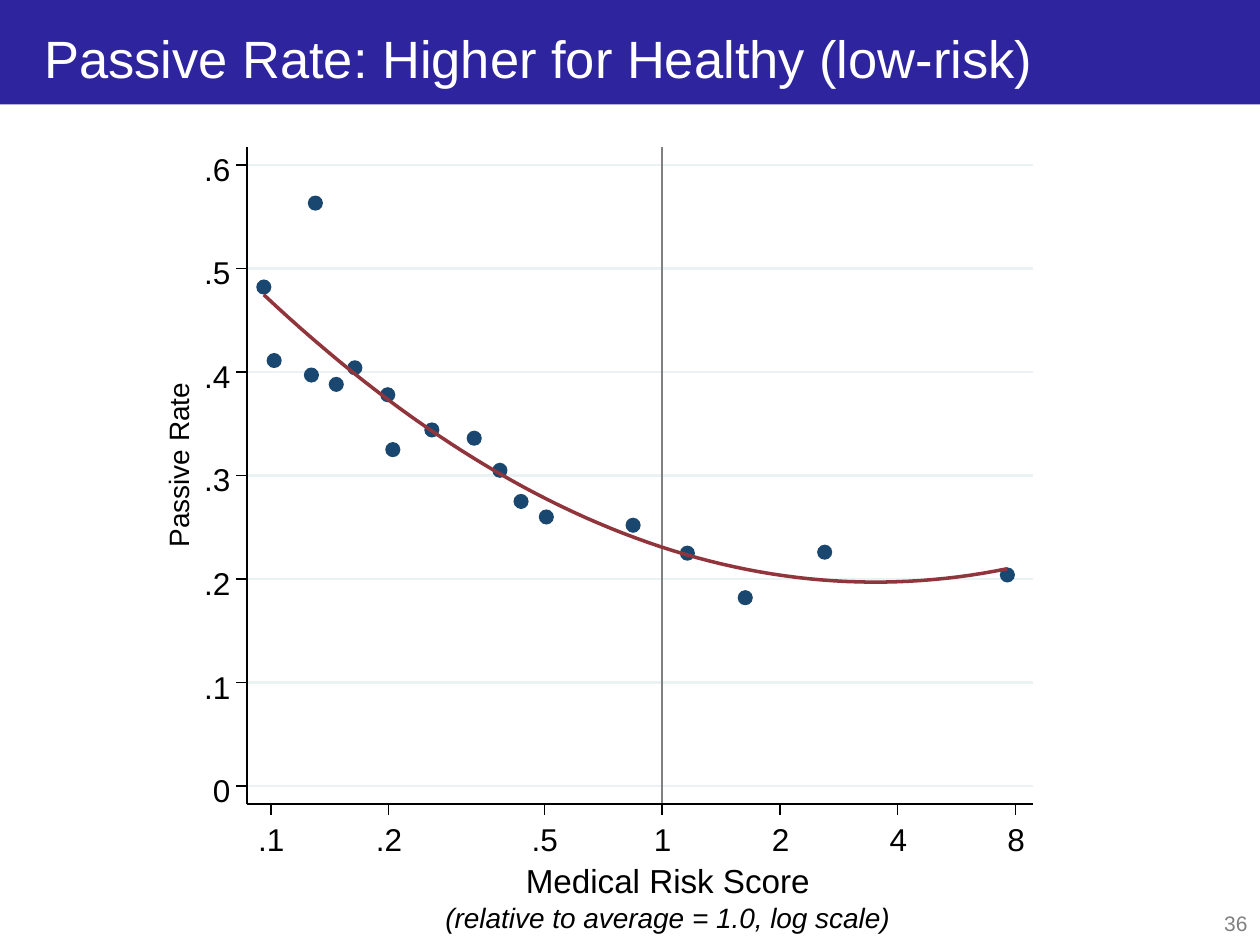
"""Build the passive rate slide: a log-scale scatter with a quadratic fit."""
from dataclasses import dataclass
from math import log2

from lxml import etree
from pptx import Presentation
from pptx.dml.color import RGBColor
from pptx.enum.shapes import MSO_CONNECTOR, MSO_SHAPE
from pptx.enum.text import MSO_ANCHOR, MSO_AUTO_SIZE, PP_ALIGN
from pptx.oxml.ns import qn
from pptx.util import Inches, Pt

LEFT, CENTER, RIGHT = PP_ALIGN.LEFT, PP_ALIGN.CENTER, PP_ALIGN.RIGHT
TOP, MIDDLE = MSO_ANCHOR.TOP, MSO_ANCHOR.MIDDLE
FIXED_SIZE = MSO_AUTO_SIZE.NONE
STRAIGHT = MSO_CONNECTOR.STRAIGHT
RECTANGLE, OVAL = MSO_SHAPE.RECTANGLE, MSO_SHAPE.OVAL

COLUMNS, ROWS = 100, 75
PLOT_LEFT, PLOT_RIGHT, PLOT_TOP, PLOT_BOTTOM = 19.6, 82, 11.7, 63.8
AVERAGE_COLUMN, DOUBLING_COLUMNS = 52.55, 9.35
ZERO_ROW, RATE_STEP_ROWS = 62.4, 8.22
TICK, DOT = 0.9, 1.2

RATE_LABELS = ["0", ".1", ".2", ".3", ".4", ".5", ".6"]
SCORE_LABELS = [".1", ".2", ".5", "1", "2", "4", "8"]
RISK_AND_RATE_PERCENT = [
    (9.6, 48.2), (10.2, 41.1), (12.7, 39.7), (13, 56.3), (14.7, 38.8),
    (16.4, 40.4), (19.9, 37.8), (20.5, 32.5), (25.8, 34.4), (33.1, 33.6),
    (38.5, 30.5), (43.6, 27.5), (50.6, 26), (84.3, 25.2), (116, 22.5),
    (163.1, 18.2), (260.2, 22.6), (762.3, 20.4),
]
FIT_LOWEST_RATE, FIT_LOWEST_DOUBLING, FIT_CURVATURE = 19.7, 1.81, 1.03
FIT_STEPS = 60


@dataclass(frozen=True)
class Theme:
    font: str = "Arial"
    banner: RGBColor = RGBColor(0x2E, 0x24, 0x9E)
    paper: RGBColor = RGBColor(0xFF, 0xFF, 0xFF)
    ink: RGBColor = RGBColor(0, 0, 0)
    muted: RGBColor = RGBColor(0x80, 0x80, 0x80)
    grid: RGBColor = RGBColor(0xEA, 0xF2, 0xF3)
    dot: RGBColor = RGBColor(0x1A, 0x47, 0x6F)
    fit: RGBColor = RGBColor(0x90, 0x35, 0x3B)
    title_size: int = 30
    axis_size: int = 19
    tick_size: int = 18
    note_size: int = 16
    page_size: int = 12
    axis_width: float = 0.88
    grid_width: float = 1.38
    fit_width: float = 2


def set_values(target, values):
    for name, value in values.items():
        setattr(target, name, value)


class SlideBuilder:
    def __init__(self, deck, theme):
        self.theme = theme
        self.slide = deck.slides.add_slide(deck.slide_layouts[5])
        self.column = deck.slide_width / COLUMNS
        self.row = deck.slide_height / ROWS

    def point(self, column, row):
        return round(column * self.column), round(row * self.row)

    def frame(self, left, top, width, height):
        return *self.point(left, top), *self.point(width, height)

    def fill_text(self, frame, lines, align=LEFT, anchor=TOP, inset=(0, 0)):
        side, edge = (Inches(gap) for gap in inset)
        set_values(frame, {
            "word_wrap": True, "auto_size": FIXED_SIZE, "vertical_anchor": anchor,
            "margin_left": side, "margin_right": side,
            "margin_top": edge, "margin_bottom": edge,
        })
        for index, (words, size, color, italic) in enumerate(lines):
            paragraph = frame.add_paragraph() if index else frame.paragraphs[0]
            paragraph.alignment = align
            run = paragraph.add_run()
            run.text = words
            set_values(run.font, {"name": self.theme.font, "size": Pt(size), "italic": italic})
            run.font.color.rgb = color

    def title(self, words, *box):
        heading = self.slide.shapes.title
        places = zip(("left", "top", "width", "height"), self.frame(*box))
        set_values(heading, dict(places))
        line = (words, self.theme.title_size, self.theme.paper, False)
        self.fill_text(heading.text_frame, [line], anchor=MIDDLE, inset=(0.1, 0.05))

    def text(self, lines, *box, align=LEFT, rotation=0, inset=(0, 0)):
        label = self.slide.shapes.add_textbox(*self.frame(*box))
        label.rotation = rotation
        self.fill_text(label.text_frame, lines, align, inset=inset)

    def solid(self, preset, color, *box):
        solid = self.slide.shapes.add_shape(preset, *self.frame(*box))
        solid.shadow.inherit = False
        solid.fill.solid()
        solid.fill.fore_color.rgb = color
        solid.line.fill.background()
        return solid

    def banner(self, *box):
        band = self.solid(RECTANGLE, self.theme.banner, *box)
        self.slide.shapes.title.element.addprevious(band.element)

    def line(self, start, end, color, width):
        rule = self.slide.shapes.add_connector(STRAIGHT, *self.point(*start), *self.point(*end))
        rule.line.color.rgb = color
        rule.line.width = Pt(width)
        etree.SubElement(rule.element.spPr, qn("a:effectLst"))

    def curve(self, points, color, width):
        start, *rest = [self.point(*place) for place in points]
        outline = self.slide.shapes.build_freeform(*start)
        outline.add_line_segments(rest, close=False)
        trend = outline.convert_to_shape()
        trend.shadow.inherit = False
        trend.fill.background()
        trend.line.color.rgb = color
        trend.line.width = Pt(width)


def score_column(doublings):
    return AVERAGE_COLUMN + DOUBLING_COLUMNS * doublings


def rate_row(percent):
    return ZERO_ROW - RATE_STEP_ROWS * percent / 10


def fit_points():
    first, last = (log2(RISK_AND_RATE_PERCENT[end][0] / 100) for end in (0, -1))
    for step in range(FIT_STEPS + 1):
        doublings = first + (last - first) * step / FIT_STEPS
        rate = FIT_LOWEST_RATE + FIT_CURVATURE * (doublings - FIT_LOWEST_DOUBLING) ** 2
        yield score_column(doublings), rate_row(rate)


def draw_plot(page):
    theme = page.theme
    rate_rows = [rate_row(10 * step) for step in range(len(RATE_LABELS))]
    for row in rate_rows:
        page.line((PLOT_LEFT, row), (PLOT_RIGHT, row), theme.grid, theme.grid_width)
    page.line((AVERAGE_COLUMN, PLOT_BOTTOM), (AVERAGE_COLUMN, PLOT_TOP),
              theme.muted, theme.grid_width)
    for risk, rate in RISK_AND_RATE_PERCENT:
        column, row = score_column(log2(risk / 100)), rate_row(rate)
        page.solid(OVAL, theme.dot, column - DOT / 2, row - DOT / 2, DOT, DOT)
    page.curve(fit_points(), theme.fit, theme.fit_width)

    def axis_line(start, end):
        page.line(start, end, theme.ink, theme.axis_width)

    def tick_label(words, left, top):
        line = (words, theme.tick_size, theme.ink, False)
        page.text([line], left, top, 1.8 + 0.7 * len(words), 3.4)

    corner = (PLOT_LEFT, PLOT_BOTTOM)
    axis_line(corner, (PLOT_LEFT, PLOT_TOP))
    for words, row in zip(RATE_LABELS, rate_rows):
        axis_line((PLOT_LEFT, row), (PLOT_LEFT - TICK, row))
        tick_label(words, 17.6 - 0.7 * len(words), row - 1.2)
    axis_line(corner, (PLOT_RIGHT, PLOT_BOTTOM))
    for words in SCORE_LABELS:
        column = score_column(log2(float(words)))
        axis_line((column, PLOT_BOTTOM), (column, PLOT_BOTTOM + TICK))
        tick_label(words, column - 0.3 - 0.35 * len(words), 65.1)


def main():
    deck = Presentation()
    deck.slide_width, deck.slide_height = Inches(10), Inches(7.5)
    theme = Theme()
    page = SlideBuilder(deck, theme)
    page.banner(0, 0, COLUMNS, 8.3)
    page.title("Passive Rate: Higher for Healthy (low-risk)", 2.5, 1.7, 95.8, 5.8)
    page.text([("36", theme.page_size, theme.muted, False)],
              91.7, 71.8, 8.3, 3, align=RIGHT, inset=(0.1, 0.05))
    draw_plot(page)
    page.text([
        ("Medical Risk Score", theme.axis_size, theme.ink, False),
        ("(relative to average = 1.0, log scale)", theme.note_size, theme.ink, True),
    ], 35.1, 68.3, 35.8, 5.9, align=CENTER)
    page.text([("Passive Rate", theme.note_size, theme.ink, False)],
              7.3, 35.4, 14, 3, align=CENTER, rotation=270)
    deck.save("out.pptx")


if __name__ == "__main__":
    main()
